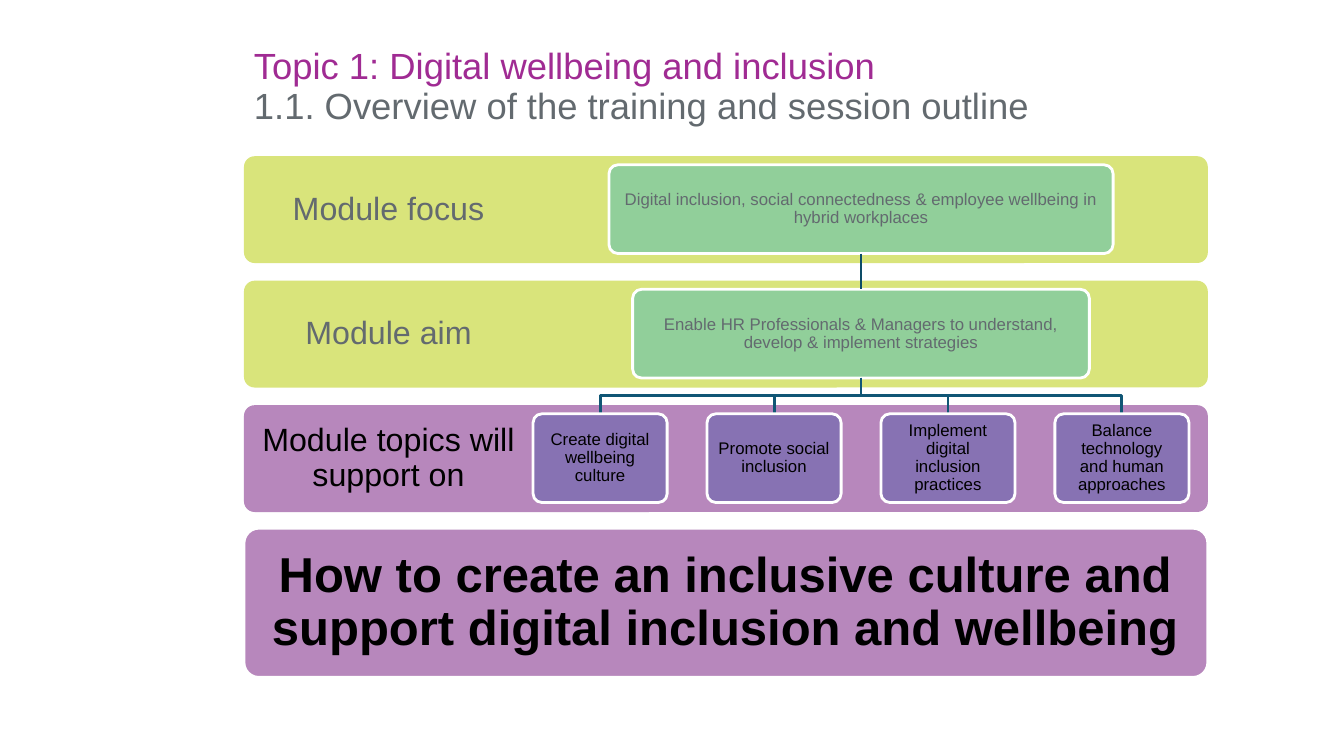
from lxml import etree
from pptx import Presentation
from pptx.dml.color import RGBColor
from pptx.enum import shapes, text
from pptx.oxml.ns import qn
from pptx.util import Inches, Pt

GREY, BLACK, WHITE = "636A6F", "000000", "FFFFFF"
LIME, MAUVE, GREEN, VIOLET = "D9E47B", "B787BC", "91CF9A", "8772B3"
BAND_LEFT, BAND_WIDTH, BAND_HEIGHT = 2.42, 9.56, 1.06
BAND_TOP, BAND_STEP = 1.55, 1.235
BOX_HEIGHT, BOX_INSET = 0.88, 0.085
CENTRE = 8.54
TOPIC_WIDTH, TOPIC_STEP = 1.33, 1.725

BANDS = [
    ("Module focus", LIME, GREY),
    ("Module aim", LIME, GREY),
    ("Module topics will support on", MAUVE, BLACK),
]
TOPICS = [
    "Create digital wellbeing culture",
    "Promote social inclusion",
    "Implement digital inclusion practices",
    "Balance technology and human approaches",
]


def colour(value):
    return RGBColor.from_string(value)


def write_lines(shape, lines, size, inset, bold=False, align=text.PP_ALIGN.CENTER,
                anchor=text.MSO_ANCHOR.MIDDLE):
    frame = shape.text_frame
    frame.word_wrap = True
    frame.vertical_anchor = anchor
    frame.margin_left = frame.margin_right = Inches(inset[0])
    frame.margin_top = frame.margin_bottom = Inches(inset[1])
    for index, (line, line_colour) in enumerate(lines):
        paragraph = frame.add_paragraph() if index else frame.paragraphs[0]
        paragraph.text = line
        paragraph.alignment = align
        paragraph.line_spacing = 0.9
        paragraph.font.name = "Arial"
        paragraph.font.size = Pt(size)
        paragraph.font.bold = bold
        paragraph.font.color.rgb = colour(line_colour)


def add_text(slide, left, top, width, height, lines, size, inset, **style):
    shape = slide.shapes.add_textbox(Inches(left), Inches(top), Inches(width), Inches(height))
    write_lines(shape, lines, size, inset, **style)


def add_panel(slide, left, top, width, height, fill, outlined=True):
    shape = slide.shapes.add_shape(shapes.MSO_SHAPE.ROUNDED_RECTANGLE, Inches(left),
                                   Inches(top), Inches(width), Inches(height))
    shape.adjustments[0] = 0.1
    shape.shadow.inherit = False
    shape.fill.solid()
    shape.fill.fore_color.rgb = colour(fill)
    if outlined:
        shape.line.color.rgb = colour(WHITE)
        shape.line.width = Pt(2)
    else:
        shape.line.fill.background()
    return shape


def add_band(slide, top, label, fill, label_colour):
    add_panel(slide, BAND_LEFT, top, BAND_WIDTH, BAND_HEIGHT, fill, outlined=False)
    add_text(slide, BAND_LEFT, top, 2.87, BAND_HEIGHT, [(label, label_colour)], 23, (0.18, 0.18))


def add_box(slide, centre, top, width, label, fill, label_colour):
    box = add_panel(slide, centre - width / 2, top, width, BOX_HEIGHT, fill)
    write_lines(box, [(label, label_colour)], 12, (0.08, 0.08))
    return box


def join_boxes(slide, upper, lower):
    connector = slide.shapes.add_connector(shapes.MSO_CONNECTOR.STRAIGHT, 0, 0, 0, 0)
    connector.begin_connect(upper, 2)
    connector.end_connect(lower, 0)
    connector.line.color.rgb = colour("0D4C67")
    connector.line.width = Pt(2)
    etree.SubElement(connector._element.spPr, qn("a:effectLst"))


def add_branch(slide, target, top, bottom):
    middle = (top + bottom) / 2
    builder = slide.shapes.build_freeform(Inches(CENTRE), Inches(top))
    corners = [(CENTRE, middle), (target, middle), (target, bottom)]
    builder.add_line_segments([(Inches(x), Inches(y)) for x, y in corners], close=False)
    branch = builder.convert_to_shape()
    branch.shadow.inherit = False
    branch.fill.background()
    branch.line.color.rgb = colour("105675")
    branch.line.width = Pt(2)


def main():
    presentation = Presentation()
    presentation.slide_width = Inches(13.33)
    presentation.slide_height = Inches(7.5)
    slide = presentation.slides.add_slide(presentation.slide_layouts[6])

    title = [("Topic 1: Digital wellbeing and inclusion", "A02B93"),
             ("1.1. Overview of the training and session outline", GREY)]
    add_text(slide, BAND_LEFT, 0.43, 10.78, 1.02, title, 26, (0.1, 0.05),
             align=text.PP_ALIGN.LEFT, anchor=text.MSO_ANCHOR.TOP)

    band_tops = [BAND_TOP + row * BAND_STEP for row in range(len(BANDS))]
    for top, band in zip(band_tops, BANDS):
        add_band(slide, top, *band)

    focus_top, aim_top, topic_top = [top + BOX_INSET for top in band_tops]
    focus = add_box(slide, CENTRE, focus_top, 5, "Digital inclusion, social connectedness "
                    "& employee wellbeing in hybrid workplaces", GREEN, GREY)
    aim = add_box(slide, CENTRE, aim_top, 4.53, "Enable HR Professionals & Managers to "
                  "understand, develop & implement strategies", GREEN, GREY)
    join_boxes(slide, focus, aim)

    for index, topic in enumerate(TOPICS):
        centre = CENTRE + (index - (len(TOPICS) - 1) / 2) * TOPIC_STEP
        add_branch(slide, centre, aim_top + BOX_HEIGHT, topic_top)
        add_box(slide, centre, topic_top, TOPIC_WIDTH, topic, VIOLET, BLACK)

    question = add_panel(slide, BAND_LEFT, 5.24, BAND_WIDTH, 1.48, MAUVE)
    write_lines(question, [("How to create an inclusive culture and support digital inclusion "
                            "and wellbeing", BLACK)], 35, (0.19, 0.19), bold=True)

    presentation.save("out.pptx")


if __name__ == "__main__":
    main()
